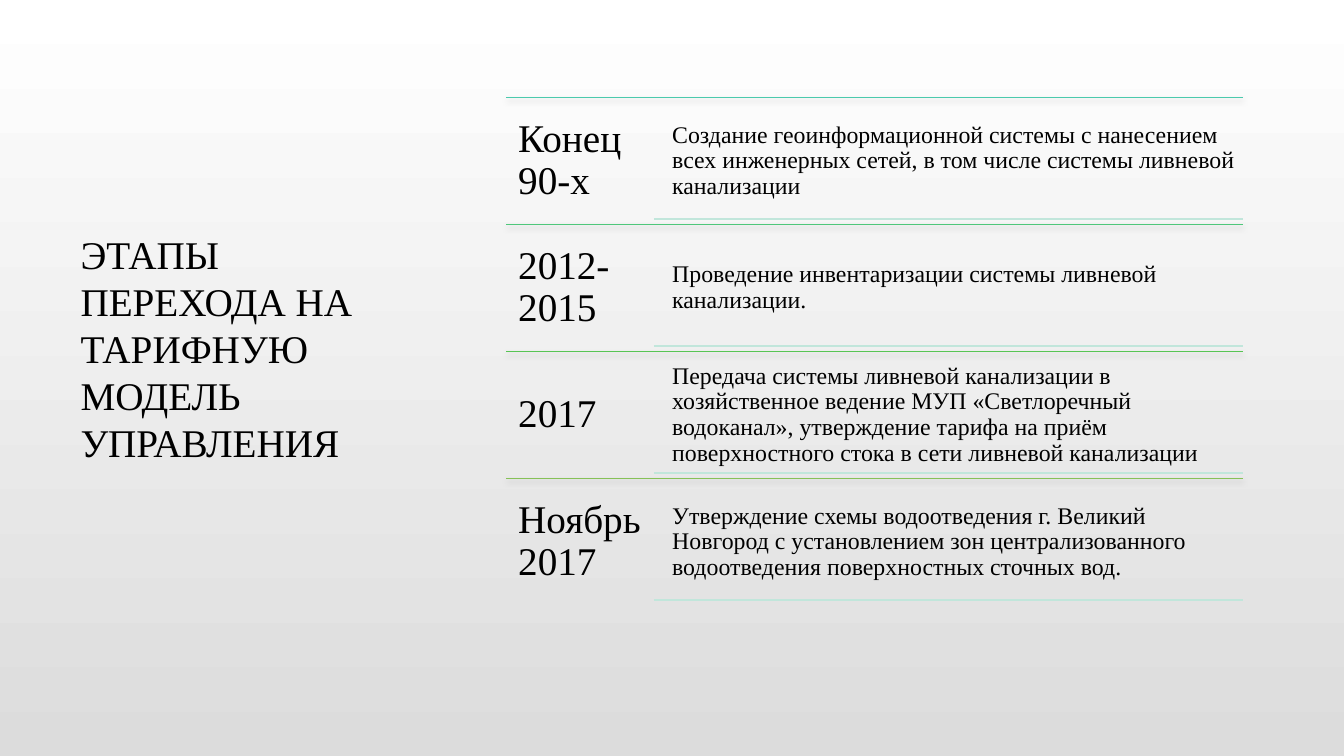
from lxml import etree
from pptx import Presentation
from pptx.dml.color import RGBColor
from pptx.enum.shapes import MSO_CONNECTOR
from pptx.enum.text import MSO_ANCHOR
from pptx.oxml.ns import qn
from pptx.util import Cm, Pt

STRAIGHT = MSO_CONNECTOR.STRAIGHT
MIDDLE = MSO_ANCHOR.MIDDLE

COLORS = {
    "text": "000000",
    "background top": "FFFFFF",
    "background bottom": "DCDCDC",
    "underline": "C1E6DB",
    "shadow": "000000",
}
FONT = "Times New Roman"

STAGES = [
    ("Конец 90-х", "4BCAAD",
     "Создание геоинформационной системы с нанесением всех инженерных сетей, "
     "в том числе системы ливневой канализации"),
    ("2012-2015", "4FC77B",
     "Проведение инвентаризации системы ливневой канализации."),
    ("2017", "57C453",
     "Передача системы ливневой канализации в хозяйственное ведение "
     "МУП «Светлоречный водоканал», утверждение тарифа на приём "
     "поверхностного стока в сети ливневой канализации"),
    ("Ноябрь 2017", "86C157",
     "Утверждение схемы водоотведения г. Великий Новгород с установлением зон "
     "централизованного водоотведения поверхностных сточных вод."),
]

LIST_LEFT, LIST_RIGHT, LIST_TOP = 12.76, 31.32, 2.46
STAGE_HEIGHT = 3.2
PERIOD_WIDTH = 3.8
DETAIL_LEFT, DETAIL_OFFSET, DETAIL_HEIGHT = 16.76, 0.15, 2.9
UNDERLINE_LEFT = 16.48

presentation = Presentation()
presentation.slide_width = Cm(33.87)
presentation.slide_height = Cm(19.05)
slide = presentation.slides.add_slide(presentation.slide_layouts[6])

background = slide.background.fill
background.gradient()
background.gradient_angle = 270
for stop, end in zip(background.gradient_stops, ("top", "bottom")):
    stop.color.rgb = RGBColor.from_string(COLORS[f"background {end}"])


def add_text(text, left, top, width, height, size, inset, spacing=0.9):
    """Add a vertically centred text box; lengths in cm, inset as (side, top)."""
    box = slide.shapes.add_textbox(Cm(left), Cm(top), Cm(width), Cm(height))
    frame = box.text_frame
    side, edge = Cm(inset[0]), Cm(inset[1])
    frame_format = {
        "word_wrap": True, "vertical_anchor": MIDDLE,
        "margin_left": side, "margin_right": side,
        "margin_top": edge, "margin_bottom": edge,
    }
    for attribute, value in frame_format.items():
        setattr(frame, attribute, value)
    paragraph = frame.paragraphs[0]
    paragraph.line_spacing = spacing
    run = paragraph.add_run()
    run.text = text
    run.font.name = FONT
    run.font.size = Pt(size)
    run.font.color.rgb = RGBColor.from_string(COLORS["text"])


def add_rule(left, top, color, weight, shadow=False):
    """Add a horizontal line from left to the right edge of the list."""
    rule = slide.shapes.add_connector(
        STRAIGHT, Cm(left), Cm(top), Cm(LIST_RIGHT), Cm(top))
    rule.line.color.rgb = RGBColor.from_string(color)
    rule.line.width = Pt(weight)
    effects = etree.SubElement(rule._element.spPr, qn("a:effectLst"))
    if shadow:
        outer = etree.SubElement(
            effects, qn("a:outerShdw"), blurRad=str(Pt(4)), dist=str(Pt(2)),
            dir="5400000", rotWithShape="0")
        tint = etree.SubElement(outer, qn("a:srgbClr"), val=COLORS["shadow"])
        etree.SubElement(tint, qn("a:alpha"), val="28000")


add_text("ЭТАПЫ ПЕРЕХОДА НА ТАРИФНУЮ МОДЕЛЬ УПРАВЛЕНИЯ",
         1.78, 3.66, 7.9, 10.21, 28, (0.25, 0.13), spacing=1.0)

for index, (period, color, detail) in enumerate(STAGES):
    top = LIST_TOP + index * STAGE_HEIGHT
    detail_top = top + DETAIL_OFFSET
    add_rule(LIST_LEFT, top, color, 0.75, shadow=True)
    add_text(period, LIST_LEFT, top, PERIOD_WIDTH, STAGE_HEIGHT, 28, (0.3, 0.3))
    add_text(detail, DETAIL_LEFT, detail_top, LIST_RIGHT - DETAIL_LEFT,
             DETAIL_HEIGHT, 17, (0.18, 0.18))
    add_rule(UNDERLINE_LEFT, detail_top + DETAIL_HEIGHT, COLORS["underline"], 1.25)

presentation.save("out.pptx")
